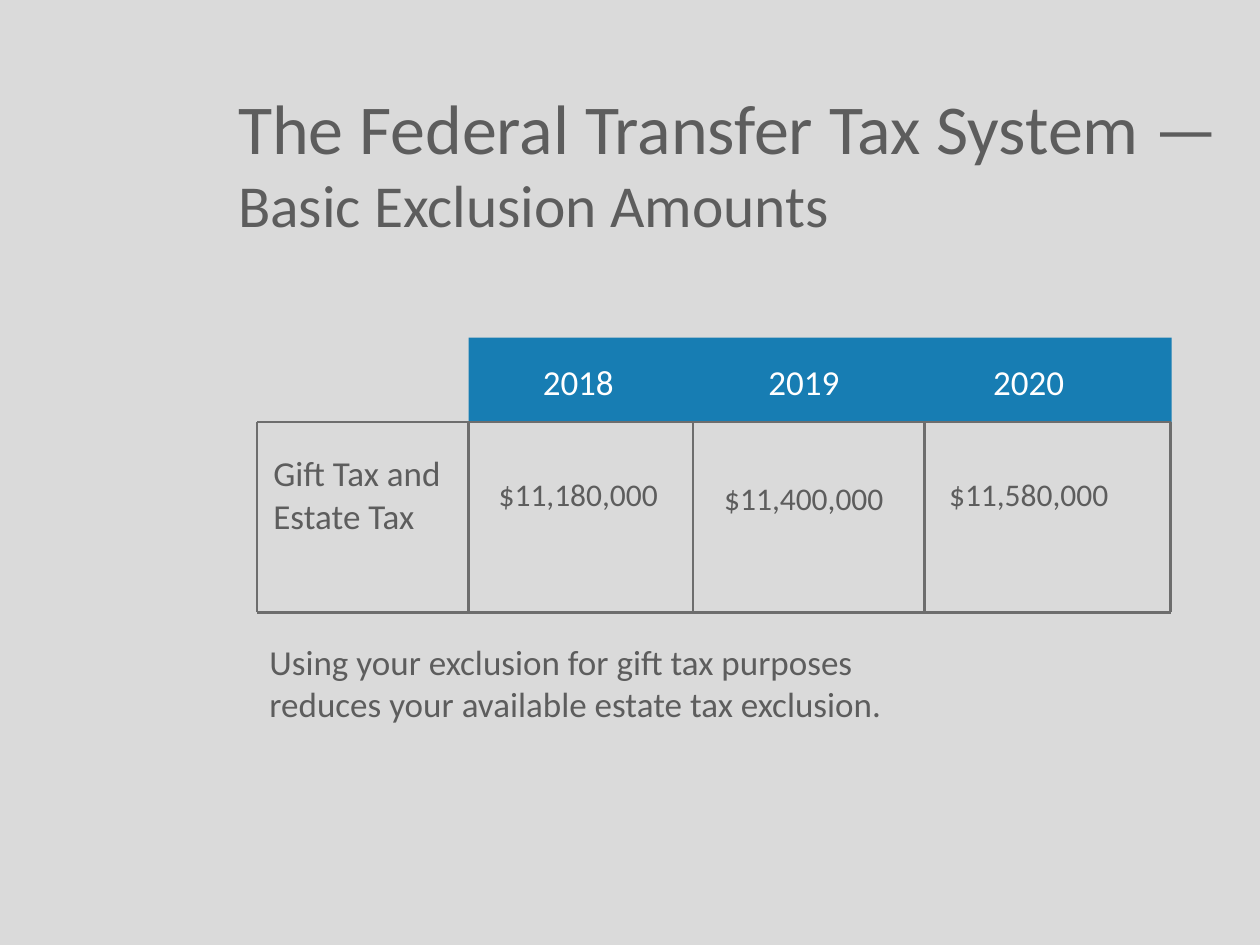
import pptx
import pptx.util
import pptx.dml.color
import pptx.enum.shapes
import pptx.enum.text
import pptx.oxml.ns
import lxml.etree

Pt = pptx.util.Pt
RGBColor = pptx.dml.color.RGBColor
ALIGN = pptx.enum.text.PP_ALIGN
MIDDLE = pptx.enum.text.MSO_ANCHOR.MIDDLE
qn = pptx.oxml.ns.qn

BACKGROUND = RGBColor(0xDA, 0xDA, 0xDA)
BLUE = RGBColor(0x17, 0x7D, 0xB3)
TEXT = RGBColor(0x5D, 0x5D, 0x5D)
RULE = RGBColor(0x6D, 0x6D, 0x6D)
WHITE = RGBColor(0xFF, 0xFF, 0xFF)
NO_STYLE_NO_GRID = "{2D5ABB26-0587-4C30-8999-92F81FD0307C}"

TITLE = [("The Federal Transfer Tax System — ", 40), ("Basic Exclusion Amounts", 34)]
YEARS = ["2018", "2019", "2020"]
TAX_LABEL = ["Gift Tax and", "Estate Tax"]
AMOUNTS = ["$11,180,000", "$11,400,000", "$11,580,000"]
NOTE = "Using your exclusion for gift tax purposes reduces your available estate tax exclusion."

COL_WIDTHS = [118.8, 128.16, 129.6, 127.44]
ROW_HEIGHTS = [38.88, 90]
RULE_XS = [146.88, 267.84, 396, 528.48, 668.88]
RULE_YS = [241.2, 349.9]
HEADER_TOP = 192.96
LOWERED = 4.6  # extra top margin that sets the 2019 amount a little lower


def add_text(p, text, size=20, color=TEXT, align=ALIGN.LEFT):
    p.alignment = align
    r = p.add_run()
    r.text = text
    r.font.name = "Calibri"
    r.font.size = Pt(size)
    r.font.color.rgb = color


def add_rule(s, x1, y1, x2, y2):
    line = s.shapes.add_connector(pptx.enum.shapes.MSO_CONNECTOR.STRAIGHT,
                                  Pt(x1), Pt(y1), Pt(x2), Pt(y2))
    line.line.color.rgb = RULE
    line.line.width = Pt(1.5)
    lxml.etree.SubElement(line._element.spPr, qn("a:effectLst"))


def fill_cell(cell, lines, lowered=0, **fmt):
    cell.fill.background()
    cell.vertical_anchor = MIDDLE
    cell.margin_left = cell.margin_right = Pt(8.64)
    cell.margin_top, cell.margin_bottom = Pt(3.6 + lowered), Pt(3.6)
    tf = cell.text_frame
    for i, text in enumerate(lines):
        add_text(tf.add_paragraph() if i else tf.paragraphs[0], text, **fmt)


prs = pptx.Presentation()
prs.slide_width, prs.slide_height = Pt(720), Pt(540)
s = prs.slides.add_slide(prs.slide_layouts[5])
s.background.fill.solid()
s.background.fill.fore_color.rgb = BACKGROUND

header = s.shapes.add_shape(pptx.enum.shapes.MSO_SHAPE.RECTANGLE,
                            Pt(RULE_XS[1]), Pt(HEADER_TOP),
                            Pt(RULE_XS[-1] - RULE_XS[1] + 0.7), Pt(RULE_YS[0] - HEADER_TOP))
header.shadow.inherit = False
header.fill.solid()
header.fill.fore_color.rgb = BLUE
header.line.fill.background()

title = s.shapes.title
title.left, title.top, title.width, title.height = Pt(128.9), Pt(44.6), Pt(575.3), Pt(95.8)
tf = title.text_frame
tf.word_wrap = True
tf.auto_size = pptx.enum.text.MSO_AUTO_SIZE.NONE
tf.vertical_anchor = MIDDLE
for text, size in TITLE:
    add_text(tf.paragraphs[0], text, size=size)

frame = s.shapes.add_table(2, 4, Pt(147.6), Pt(199.44), Pt(sum(COL_WIDTHS)), Pt(sum(ROW_HEIGHTS)))
table = frame.table
table.first_row = table.horz_banding = False
table._tbl.tblPr.find(qn("a:tableStyleId")).text = NO_STYLE_NO_GRID
for column, width in zip(table.columns, COL_WIDTHS):
    column.width = Pt(width)
for row, height in zip(table.rows, ROW_HEIGHTS):
    row.height = Pt(height)
table.cell(0, 0).fill.background()
fill_cell(table.cell(1, 0), TAX_LABEL)
for c, (year, amount) in enumerate(zip(YEARS, AMOUNTS), start=1):
    fill_cell(table.cell(0, c), [year], color=WHITE, align=ALIGN.CENTER)
    fill_cell(table.cell(1, c), [amount], size=18, align=ALIGN.CENTER,
              lowered=LOWERED if year == "2019" else 0)

note = s.shapes.add_textbox(Pt(146.9), Pt(362.2), Pt(384.5), Pt(55.4))
note.text_frame.word_wrap = True
add_text(note.text_frame.paragraphs[0], NOTE)

for x in RULE_XS:
    add_rule(s, x, RULE_YS[0], x, RULE_YS[1])
for y in RULE_YS:
    add_rule(s, RULE_XS[0], y, RULE_XS[-1], y)

prs.save("out.pptx")
